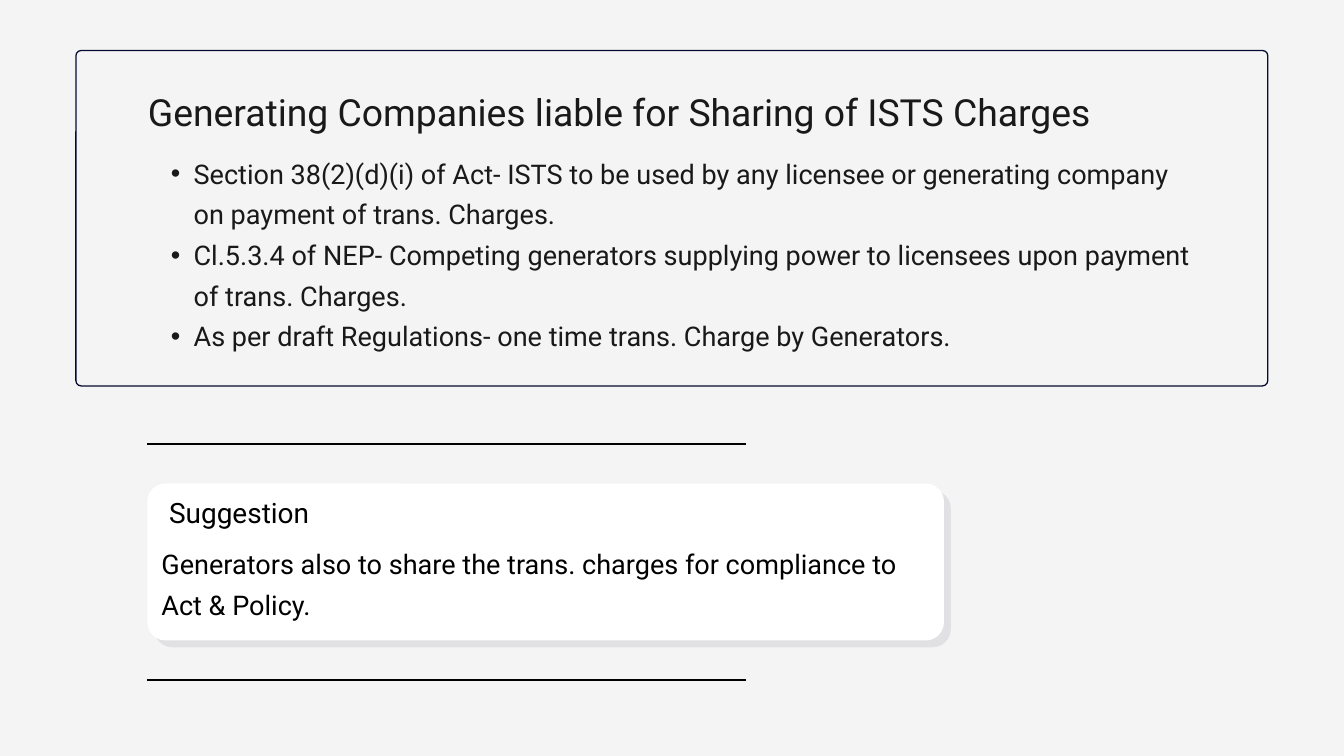
from lxml import etree
from pptx import Presentation
from pptx.dml.color import RGBColor
from pptx.enum.shapes import MSO_CONNECTOR, MSO_SHAPE
from pptx.enum.text import MSO_ANCHOR, MSO_AUTO_SIZE, PP_ALIGN
from pptx.oxml.ns import qn
from pptx.util import Cm, Pt

ROUNDED = MSO_SHAPE.ROUNDED_RECTANGLE
STRAIGHT = MSO_CONNECTOR.STRAIGHT
TOP = MSO_ANCHOR.TOP
NO_FIT = MSO_AUTO_SIZE.NONE
LEFT, RIGHT = PP_ALIGN.LEFT, PP_ALIGN.RIGHT

TITLE_ONLY = 5
NAVY, INK, BLACK, WHITE, PAPER = "050A30", "191919", "000000", "FFFFFF", "F4F4F4"


def colour(hex_code):
    return RGBColor.from_string(hex_code)


class SlideBuilder:
    font = "Roboto"
    bullet_left, bullet_hang = Cm(1.73), Cm(0.86)

    def __init__(self, slide):
        self.slide = slide
        slide.background.fill.solid()
        slide.background.fill.fore_color.rgb = colour(PAPER)

    def rounded_box(self, x, y, w, h, radius, fill=None, alpha=None, line=None):
        box = self.slide.shapes.add_shape(ROUNDED, Cm(x), Cm(y), Cm(w), Cm(h))
        box.shadow.inherit = False
        box.adjustments[0] = radius / min(w, h)
        if fill:
            box.fill.solid()
            box.fill.fore_color.rgb = colour(fill)
        else:
            box.fill.background()
        if alpha:
            tint = box._element.spPr.find(qn("a:solidFill")).find(qn("a:srgbClr"))
            etree.SubElement(tint, qn("a:alpha"), val=str(alpha * 1000))
        if line:
            box.line.color.rgb = colour(line)
            box.line.width = Pt(1.4)
        else:
            box.line.fill.background()

    def rule(self, x, y, length):
        line = self.slide.shapes.add_connector(
            STRAIGHT, Cm(x), Cm(y), Cm(x + length), Cm(y))
        line.line.color.rgb = colour(BLACK)
        line.line.width = Pt(2.25)
        etree.SubElement(line._element.spPr, qn("a:effectLst"))

    def title(self, text, x, y, w, h, **style):
        holder = self.slide.shapes.title
        holder.left, holder.top, holder.width, holder.height = Cm(x), Cm(y), Cm(w), Cm(h)
        self.fill_text(holder.text_frame, [text], **style)

    def text(self, lines, x, y, w, h, **style):
        box = self.slide.shapes.add_textbox(Cm(x), Cm(y), Cm(w), Cm(h))
        self.fill_text(box.text_frame, lines, **style)

    def fill_text(self, frame, lines, size, spacing, ink, align=LEFT, bullets=False):
        frame.word_wrap = True
        frame.auto_size = NO_FIT
        frame.vertical_anchor = TOP
        frame.margin_left = frame.margin_right = 0
        frame.margin_top = frame.margin_bottom = 0
        for number, line in enumerate(lines):
            paragraph = frame.add_paragraph() if number else frame.paragraphs[0]
            paragraph.alignment = align
            paragraph.line_spacing = Pt(spacing)
            paragraph.space_before = Pt(0)
            if bullets:
                self.bullet(paragraph)
            run = paragraph.add_run()
            run.text = line
            run.font.name = self.font
            run.font.size = Pt(size)
            run.font.color.rgb = colour(ink)

    def bullet(self, paragraph):
        paragraph.level = 1
        props = paragraph._p.get_or_add_pPr()
        props.set("marL", str(self.bullet_left))
        props.set("indent", str(-self.bullet_hang))
        etree.SubElement(props, qn("a:buFont"), typeface="Arial")
        etree.SubElement(props, qn("a:buChar"), char="•")


def main():
    deck = Presentation()
    deck.slide_width, deck.slide_height = Cm(50.8), Cm(28.58)
    page = SlideBuilder(deck.slides.add_slide(deck.slide_layouts[TITLE_ONLY]))

    # Framed legal basis
    page.rounded_box(2.87, 1.91, 45.05, 12.68, radius=0.2, line=NAVY)
    page.text(
        ["Section 38(2)(d)(i) of Act- ISTS to be used by any licensee or "
         "generating company on payment of trans. Charges.",
         "Cl.5.3.4 of NEP- Competing generators supplying power to licensees "
         "upon payment of trans. Charges.",
         "As per draft Regulations- one time trans. Charge by Generators."],
        5.59, 5.64, 39.6, 9.19, size=29, spacing=43.5, ink=INK, bullets=True)
    page.title("Generating Companies liable for Sharing of ISTS Charges",
               5.59, 3.23, 39.6, 1.75, size=40, spacing=52, ink=INK)

    # Suggestion card over its offset shade
    card_x, card_y, offset = 5.57, 18.28, 0.26
    for shift, fill, alpha in ((offset, NAVY, 8), (0, WHITE, None)):
        page.rounded_box(card_x + shift, card_y + shift, 30.11, 5.93,
                         radius=0.68, fill=fill, alpha=alpha)
    page.text(["Suggestion"], 5.59, 18.54, 6.1, 1.42,
              size=30, spacing=42, ink=BLACK, align=RIGHT)
    page.text(["Generators also to share the trans. charges for compliance to "
               "Act & Policy."],
              6.1, 20.4, 28.98, 3.07, size=29, spacing=43.5, ink=BLACK)

    # Rules above and below the card
    for rule_y in (16.79, 25.7):
        page.rule(card_x, rule_y, 22.63)

    deck.save("out.pptx")


if __name__ == "__main__":
    main()
